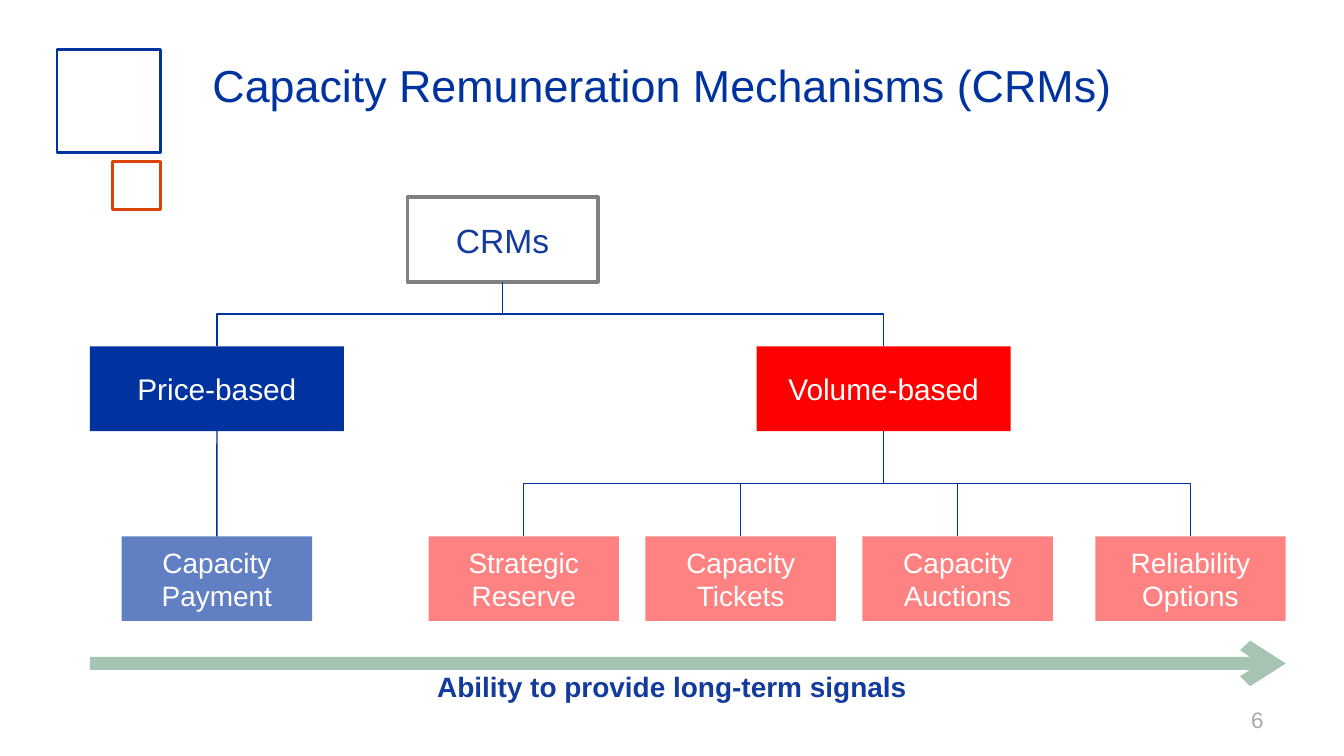
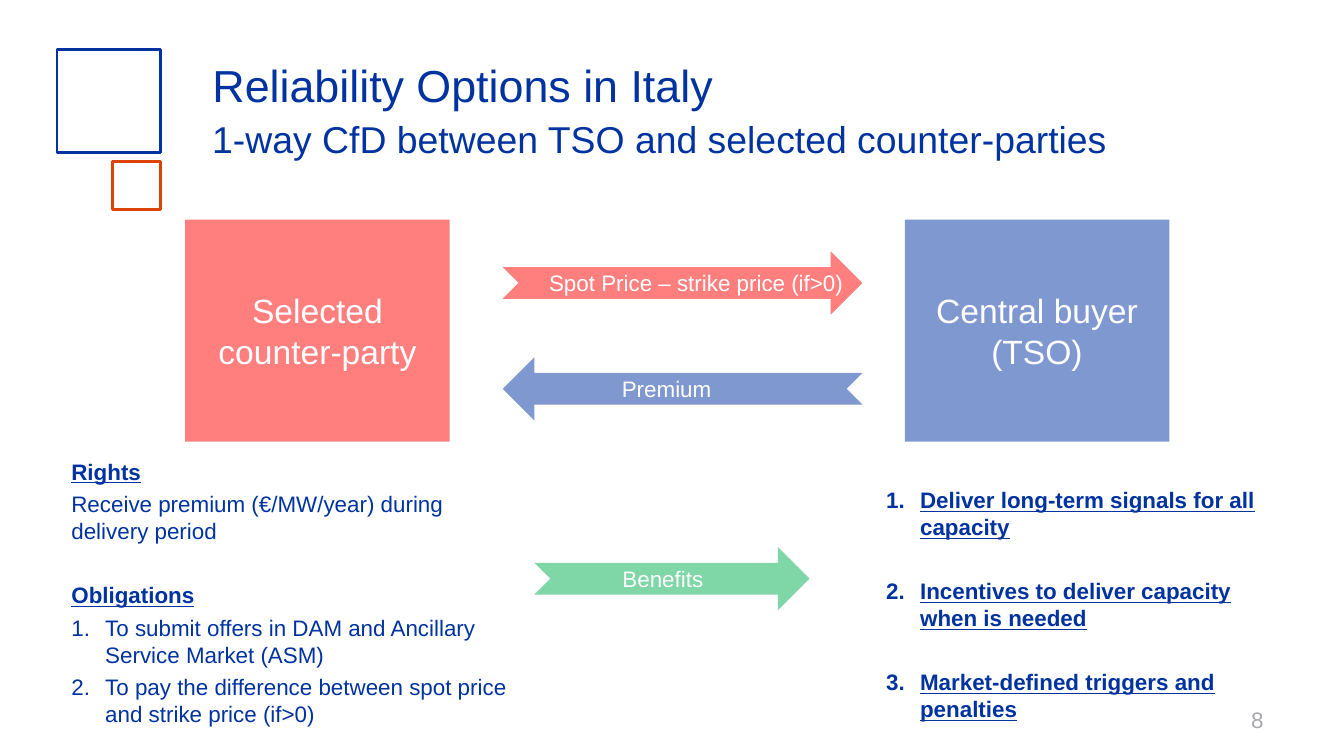
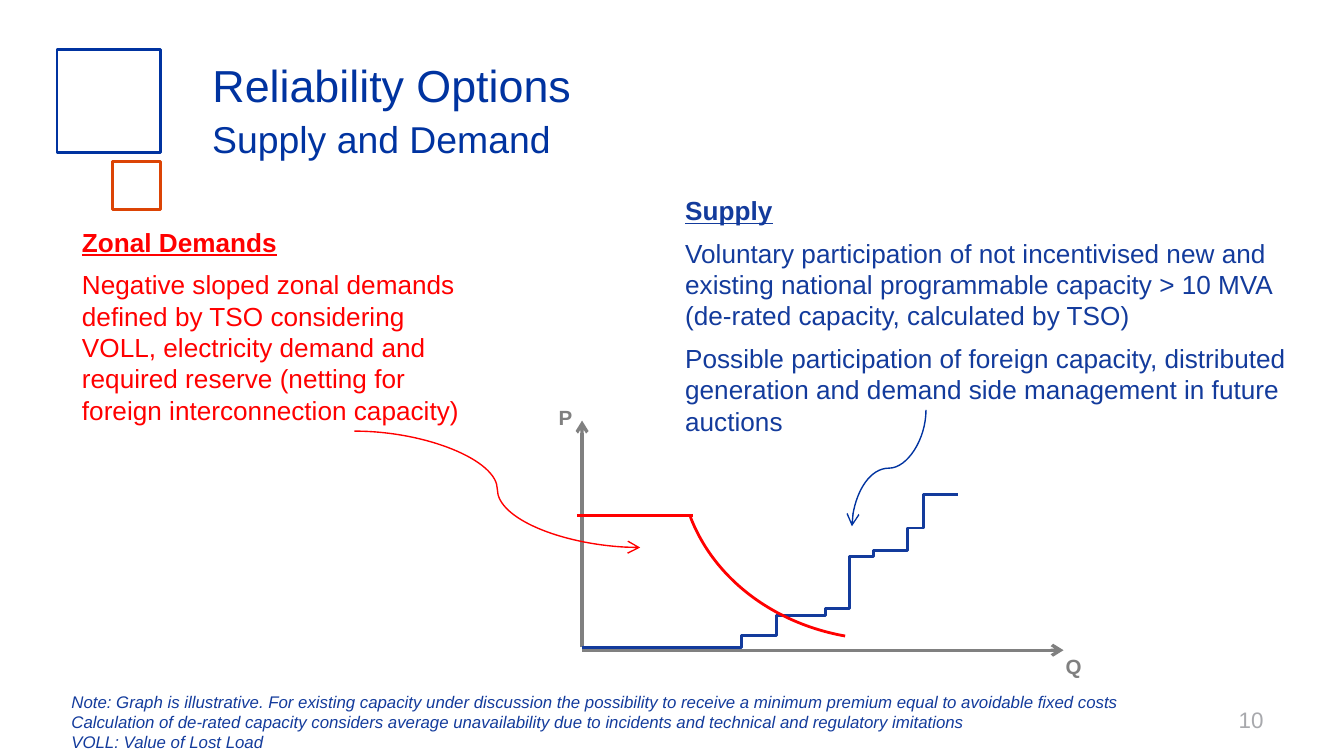
import pptx
import pptx.dml.color
import pptx.enum.shapes
import pptx.enum.text
import pptx.oxml.ns
import pptx.oxml.xmlchemy
import pptx.util

Cm = pptx.util.Cm
Pt = pptx.util.Pt
qn = pptx.oxml.ns.qn
SHAPE = pptx.enum.shapes.MSO_SHAPE
LINK = pptx.enum.shapes.MSO_CONNECTOR
ALIGN = pptx.enum.text.PP_ALIGN
ANCHOR = pptx.enum.text.MSO_ANCHOR

NAVY, INK, LINK_BLUE = "0033A0", "133B9C", "00329C"
RED, ORANGE, GREEN, FOREST = "FF0000", "DC4405", "00B050", "005820"
GREY, PALE_GREY, WHITE = "808080", "A8A9AD", "FFFFFF"

CENTRED = {"alignment": ALIGN.CENTER}
HEADING = {"bold": True, "underline": True}


def rgb(colour):
    return pptx.dml.color.RGBColor.from_string(colour)


def set_all(obj, values):
    for name, value in values.items():
        setattr(obj, name, value)


def cm_box(box):
    return [Cm(v) for v in box]


def add_xml(parent, tag, **attrs):
    el = pptx.oxml.xmlchemy.OxmlElement(tag)
    for name, value in attrs.items():
        el.set(name, str(value))
    parent.append(el)
    return el


def set_alpha(sp, alpha):
    for el in sp._element.xpath("./p:spPr//a:solidFill/a:srgbClr"):
        add_xml(el, "a:alpha", val=alpha * 1000)


def para(text, fmt=None, font=None, numbered=False):
    return {"text": text, "fmt": fmt or {}, "font": font or {}, "numbered": numbered}


def write(sp, paras, size, colour, fmt=None, **frame):
    tf = sp.text_frame
    set_all(tf, {"word_wrap": True, **frame})
    for i, item in enumerate(paras):
        p = tf.paragraphs[0] if i == 0 else tf.add_paragraph()
        if item["numbered"]:
            pPr = p._p.get_or_add_pPr()
            pPr.set("marL", str(Cm(0.64)))
            pPr.set("indent", str(-Cm(0.64)))
            add_xml(pPr, "a:buFont", typeface="+mj-lt")
            add_xml(pPr, "a:buAutoNum", type="arabicPeriod")
        set_all(p, {**(fmt or {}), **item["fmt"]})
        r = p.add_run()
        r.text = item["text"]
        set_all(r.font, {"name": "Arial", "size": Pt(size), **item["font"]})
        r.font.color.rgb = rgb(colour)


def add_text(slide, box, paras, size, colour, fmt=None, **frame):
    sp = slide.shapes.add_textbox(*cm_box(box))
    write(sp, paras, size, colour, fmt, **frame)
    return sp


def style_line(sp, colour, width):
    sp.line.color.rgb = rgb(colour)
    sp.line.width = Pt(width)


def add_shape(slide, kind, box, fill=None, alpha=None, line=None):
    sp = slide.shapes.add_shape(kind, *cm_box(box))
    sp.shadow.inherit = False
    if fill:
        sp.fill.solid()
        sp.fill.fore_color.rgb = rgb(fill)
    else:
        sp.fill.background()
    if line:
        style_line(sp, *line)
    else:
        sp.line.fill.background()
    if alpha:
        set_alpha(sp, alpha)
    return sp


def add_block(slide, box, lines, size, colour=WHITE, **look):
    sp = add_shape(slide, SHAPE.RECTANGLE, box, **look)
    write(sp, [para(t) for t in lines], size, colour, CENTRED, vertical_anchor=ANCHOR.MIDDLE)
    return sp


def add_line(slide, start, end, colour, width, kind=LINK.STRAIGHT, arrow=None):
    c = slide.shapes.add_connector(kind, *cm_box(start + end))
    style_line(c, colour, width)
    spPr = c._element.spPr
    if arrow:
        add_xml(spPr.find(qn("a:ln")), "a:" + arrow, type="arrow")
    add_xml(spPr, "a:effectLst")
    return c


def turn_upright(c):
    rightward, upward = c.begin_x <= c.end_x, c.begin_y > c.end_y
    mid_x, mid_y = c.left + c.width // 2, c.top + c.height // 2
    w, h = c.height, c.width
    set_all(c, {"left": mid_x - w // 2, "top": mid_y - h // 2, "width": w, "height": h})
    xfrm = c._element.spPr.find(qn("a:xfrm"))
    xfrm.set("rot", "5400000" if rightward == upward else "16200000")
    xfrm.set("flipH", str(int(rightward)))


def add_branch(slide, parent, child):
    straight = abs(parent.left + parent.width // 2 - child.left - child.width // 2) < Cm(0.02)
    kind = LINK.STRAIGHT if straight else LINK.ELBOW
    c = add_line(slide, (0, 0), (1, 1), LINK_BLUE, 0.75, kind)
    c.begin_connect(child, 0)
    c.end_connect(parent, 2)
    if not straight:
        turn_upright(c)


def add_squares(slide, box):
    x, y, w, h = box
    small = 0.9
    add_shape(slide, SHAPE.RECTANGLE, (x, y, w, w), line=(NAVY, 1.5))
    add_shape(slide, SHAPE.RECTANGLE, (x + w - small, y + h - small, small, small), line=(ORANGE, 1.5))


def start_slide(prs, title, number, subtitle=None):
    slide = prs.slides.add_slide(prs.slide_layouts[5])
    add_squares(slide, (1.08, 0.94, 1.95, 3.02))
    sp = slide.shapes.title
    names = ("left", "top", "width", "height")
    set_all(sp, dict(zip(names, cm_box((3.76, 0.92, 17.83, 1)))))
    line = {"alignment": ALIGN.LEFT, "line_spacing": Pt(28)}
    write(sp, [para(title)], 24, NAVY, line, vertical_anchor=ANCHOR.TOP,
          auto_size=pptx.enum.text.MSO_AUTO_SIZE.NONE, margin_top=Cm(0.2))
    if subtitle:
        add_text(slide, (3.76, 1.93, 17.83, 1), [para(subtitle)], 20, NAVY, line)
    add_text(slide, (22.7, 13.23, 1.43, 0.77), [para(str(number))], 12, PALE_GREY,
             {"alignment": ALIGN.RIGHT})
    return slide


def mechanism_tree(slide, box):
    x, y, w, h = box
    row_h, leaf_w, group_w = 1.6, 3.6, 4.8
    group_y, leaf_y = y + 2.82, y + h - row_h
    root = add_block(slide, (x + 6, y, leaf_w, row_h), ["CRMs"], 18, INK, line=(GREY, 2))
    groups = [
        ("Price-based", 0, NAVY, 62, [("Capacity Payment", 0.6)]),
        ("Volume-based", 12.6, RED, 49, [
            ("Strategic Reserve", 6.4), ("Capacity Tickets", 10.5),
            ("Capacity Auctions", 14.6), ("Reliability Options", w - leaf_w)]),
    ]
    for name, dx, colour, alpha, leaves in groups:
        group = add_block(slide, (x + dx, group_y, group_w, row_h), [name], 16, fill=colour)
        add_branch(slide, root, group)
        for leaf_name, leaf_dx in leaves:
            leaf = add_block(slide, (x + leaf_dx, leaf_y, leaf_w, row_h), [leaf_name], 15,
                             fill=colour, alpha=alpha)
            add_branch(slide, group, leaf)


def signal_arrow(slide, box):
    x, y, w, h = box
    c = add_line(slide, (x, y), (x + w, y), FOREST, 7, arrow="tailEnd")
    set_alpha(c, 35)
    add_text(slide, (x - 0.2, y, w - 0.2, h),
             [para("Ability to provide long-term signals", font={"bold": True})], 15, INK, CENTRED)


def flow_arrow(slide, box, colour, text, label_dx, label_w, rotation=0):
    x, y, w, h = box
    sp = add_shape(slide, SHAPE.NOTCHED_RIGHT_ARROW, box, fill=colour, alpha=50)
    sp.rotation = rotation
    add_text(slide, (x + label_dx, y + 0.22, label_w, h - 0.44), [para(text)], 12, WHITE,
             CENTRED, word_wrap=False)


def contract_flows(slide, box):
    x, y, w, h = box
    party_w, flow_w, flow_h = 5, 6.8, 1.2
    add_block(slide, (x, y, party_w, h), ["Selected counter-party"], 18, fill=RED, alpha=50)
    add_block(slide, (x + w - party_w, y, party_w, h), ["Central buyer", "(TSO)"], 18,
              fill=NAVY, alpha=50)
    flows = [(RED, "Spot Price – strike price (if>0)", 0.6, 6.12, 0),
             (NAVY, "Premium", 2, 2.2, 180)]
    for i, (colour, text, dx, label_w, rotation) in enumerate(flows):
        flow_arrow(slide, (x + 6, y + 0.6 + 2 * i, flow_w, flow_h), colour, text, dx, label_w, rotation)


def contract_terms(slide, box):
    x, y, w, h = box
    after = {"space_after": Pt(3)}
    gap = {"space_before": Pt(17)}
    add_text(slide, (x, y, 9, h), [
        para("Rights", font=HEADING),
        para("Receive premium (€/MW/year) during delivery period"),
        para("Obligations", gap, HEADING),
        para("To submit offers in DAM and Ancillary Service Market (ASM)", numbered=True),
        para("To pay the difference between spot price and strike price (if>0)", numbered=True),
    ], 12, NAVY, after)
    flow_arrow(slide, (x + 9, y + 1.81, 5.2, 1.2), GREEN, "Benefits", 1.4, 2.06)
    benefits = ["Deliver long-term signals for all capacity",
                "Incentives to deliver capacity when is needed",
                "Market-defined triggers and penalties"]
    add_text(slide, (x + w - 7.8, y + 0.54, 7.8, 4.77),
             [para(t, gap if i else None, HEADING, True) for i, t in enumerate(benefits)],
             12, NAVY, after)


def headed_text(slide, box, heading, texts, colour):
    add_text(slide, box, [para(heading, font=HEADING)]
             + [para(t, {"space_before": Pt(6)}) for t in texts], 14, colour)


def supply_steps(slide, x, y):
    treads = [(3.02, 4.29), (3.68, 4.06), (4.6, 3.68), (5.05, 3.56),
              (5.51, 2.57), (6.15, 2.46), (6.45, 2.03), (7.1, 1.4)]
    points, left = [], 0
    for right, level in treads:
        points += [(Cm(x + left), Cm(y + level)), (Cm(x + right), Cm(y + level))]
        left = right
    builder = slide.shapes.build_freeform(*points[0])
    builder.add_line_segments(points[1:], close=False)
    sp = builder.convert_to_shape()
    sp.shadow.inherit = False
    sp.fill.background()
    style_line(sp, INK, 1.5)


def market_graph(slide, box):
    x, y, w, h = box
    add_line(slide, (x, y), (x, y + h - 0.05), GREY, 1.75, arrow="headEnd")
    add_line(slide, (x, y + h), (x + w, y + h), GREY, 1.75, arrow="tailEnd")
    supply_steps(slide, x, y)
    for name, dx, dy in [("Q", w - 0.21, h - 0.05), ("P", -0.69, -0.41)]:
        add_text(slide, (x + dx, y + dy, 0.8, 0.74), [para(name, font={"bold": True})], 11, GREY,
                 word_wrap=False)
    arc = add_shape(slide, SHAPE.ARC, (x + 1.85, y - 2.62, 7.8, 6.76), line=(RED, 1.5))
    arc.adjustments[0], arc.adjustments[1] = 169.94, 206.4
    arc.rotation = 180
    add_line(slide, (x - 0.1, y + 1.8), (x + 2.1, y + 1.8), RED, 1.5)
    add_line(slide, (x - 4.3, y + 0.2), (x + 1.1, y + 2.4), RED, 0.75, LINK.CURVE, "tailEnd")
    pointer = add_line(slide, (x + 6.5, y - 0.2), (x + 5.1, y + 2), NAVY, 0.75, LINK.CURVE, "tailEnd")
    turn_upright(pointer)


def mechanisms_slide(prs):
    slide = start_slide(prs, "Capacity Remuneration Mechanisms (CRMs)", 6)
    mechanism_tree(slide, (1.7, 3.73, 22.6, 8.01))
    signal_arrow(slide, (1.7, 12.54, 22.6, 0.9))


def italy_slide(prs):
    slide = start_slide(prs, "Reliability Options in Italy", 8,
                        "1-way CfD between TSO and selected counter-parties")
    contract_flows(slide, (3.5, 4.15, 18.6, 4.2))
    contract_terms(slide, (1.1, 8.53, 23.2, 5.4))


def supply_demand_slide(prs):
    slide = start_slide(prs, "Reliability Options", 10, "Supply and Demand")
    headed_text(slide, (12.7, 3.55, 12.2, 5.7), "Supply", [
        "Voluntary participation of not incentivised new and existing national programmable "
        "capacity > 10 MVA (de-rated capacity, calculated by TSO)",
        "Possible participation of foreign capacity, distributed generation and demand side "
        "management in future auctions"], INK)
    headed_text(slide, (1.3, 4.15, 7.8, 4.06), "Zonal Demands", [
        "Negative sloped zonal demands defined by TSO considering VOLL, electricity demand and "
        "required reserve (netting for foreign interconnection capacity)"], RED)
    market_graph(slide, (11, 7.95, 9.1, 4.34))
    notes = ["Note: Graph is illustrative. For existing capacity under discussion the possibility "
             "to receive a minimum premium equal to avoidable fixed costs",
             "Calculation of de-rated capacity considers average unavailability due to incidents "
             "and technical and regulatory imitations",
             "VOLL: Value of Lost Load"]
    add_text(slide, (1.1, 12.95, 21.4, 1.42), [para(t, font={"italic": True}) for t in notes], 9, INK)


def main():
    prs = pptx.Presentation()
    set_all(prs, {"slide_width": Cm(25.4), "slide_height": Cm(14.29)})
    mechanisms_slide(prs)
    italy_slide(prs)
    supply_demand_slide(prs)
    prs.save("out.pptx")


if __name__ == "__main__":
    main()
